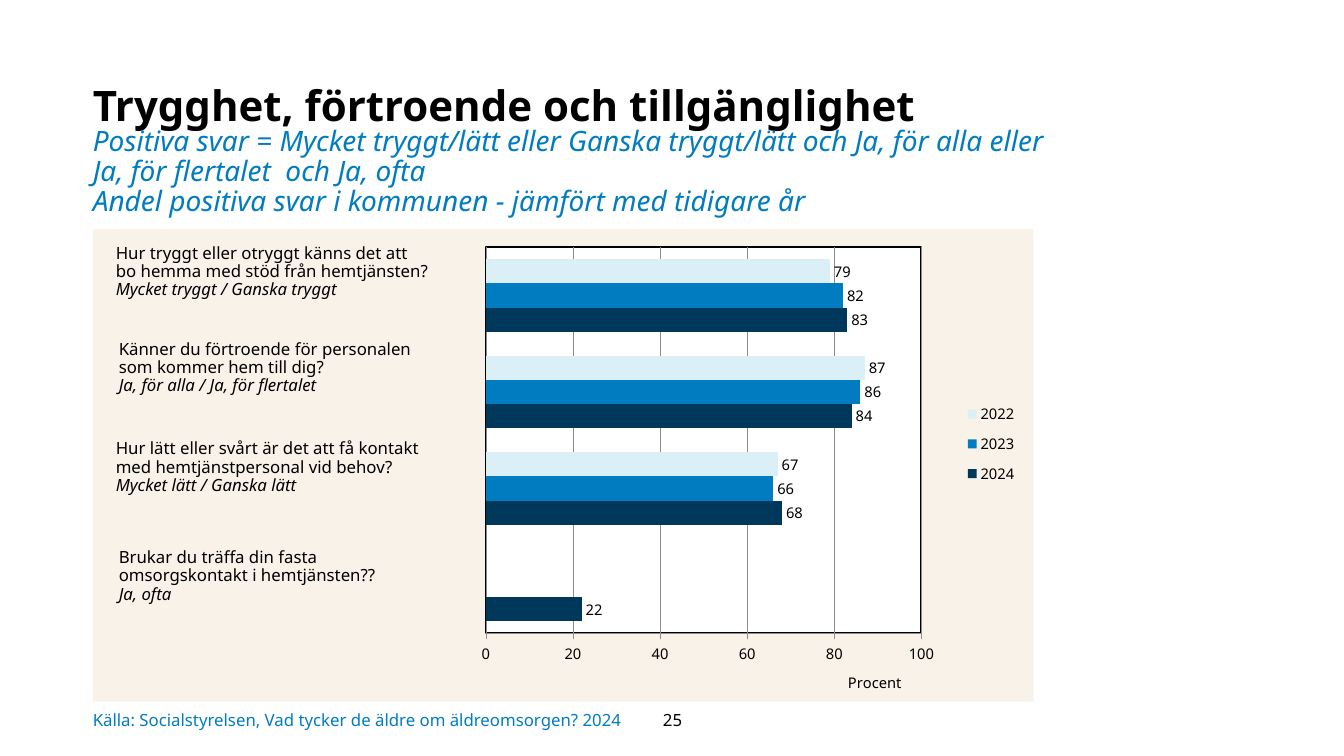
from lxml import etree
from pptx import Presentation
from pptx.chart.data import CategoryChartData
from pptx.dml.color import RGBColor
from pptx.enum.chart import XL_CHART_TYPE, XL_LABEL_POSITION, XL_LEGEND_POSITION, XL_TICK_MARK
from pptx.enum.text import MSO_ANCHOR, MSO_AUTO_SIZE, PP_ALIGN
from pptx.oxml import parse_xml
from pptx.oxml.ns import nsdecls, qn
from pptx.util import Inches, Pt

BAR = XL_CHART_TYPE.BAR_CLUSTERED
OUTSIDE_END = XL_LABEL_POSITION.OUTSIDE_END
LEGEND_RIGHT = XL_LEGEND_POSITION.RIGHT
TICK_OUT = XL_TICK_MARK.OUTSIDE
TOP, MIDDLE = MSO_ANCHOR.TOP, MSO_ANCHOR.MIDDLE
LEFT, CENTER = PP_ALIGN.LEFT, PP_ALIGN.CENTER

# Content
TITLE = "Trygghet, förtroende och tillgänglighet"
SUBTITLE = [
    "Positiva svar = Mycket tryggt/lätt eller Ganska tryggt/lätt och Ja, för alla eller "
    "Ja, för flertalet  och Ja, ofta",
    "Andel positiva svar i kommunen - jämfört med tidigare år",
]
QUESTIONS = [  # left, top, width, question lines, positive answers
    (1.05, 2.38, 3.48, ["Hur tryggt eller otryggt känns det att",
                        "bo hemma med stöd från hemtjänsten?"], "Mycket tryggt / Ganska tryggt"),
    (1.08, 3.33, 3.26, ["Känner du förtroende för personalen",
                        "som kommer hem till dig?"], "Ja, för alla / Ja, för flertalet"),
    (1.05, 4.32, 3.23, ["Hur lätt eller svårt är det att få kontakt",
                        "med hemtjänstpersonal vid behov?"], "Mycket lätt / Ganska lätt"),
    (1.08, 5.40, 3.26, ["Brukar du träffa din fasta omsorgskontakt i hemtjänsten??"],
     "Ja, ofta"),
]
CATEGORIES = ["1", "2", "3", "4"]
SERIES = [  # year, values from the bottom question up, colour
    ("2024", (22, 68, 84, 83), "00385C"),
    ("2023", (None, 66, 86, 82), "017CC1"),
    ("2022", (None, 67, 87, 79), "DBF0F6"),
]
AXIS_TITLE = "Procent"
SOURCE = "Källa: Socialstyrelsen, Vad tycker de äldre om äldreomsorgen? 2024"
PAGE = "25"

THEME = {
    "font": "Noto Sans", "text": "000000", "accent": "017CC1",
    "panel": "F8F2E8", "plot": "FFFFFF", "grid": "8C8C8C",
    "title": 30, "subtitle": 20, "body": 12, "chart": 10.5,
}


def style(font, size, color=THEME["text"], bold=False, italic=False):
    font.name = THEME["font"]
    font.size = Pt(size)
    font.bold = bold
    font.italic = italic
    font.color.rgb = RGBColor.from_string(color)


def place(s, left, top, width, height):
    s.left, s.top, s.width, s.height = map(Inches, (left, top, width, height))


def write(s, lines, spacing=0.9, anchor=TOP, align=LEFT, insets=(0.1, 0.05, 0.1, 0.05)):
    """Fill a shape with one paragraph; each line is (text, style arguments)."""
    tf = s.text_frame
    tf.word_wrap = True
    tf.auto_size = MSO_AUTO_SIZE.NONE
    tf.vertical_anchor = anchor
    tf.margin_left, tf.margin_top, tf.margin_right, tf.margin_bottom = map(Inches, insets)
    p = tf.paragraphs[0]
    p.alignment = align
    p.line_spacing = spacing
    p.space_before = Pt(0)
    for i, (text, look) in enumerate(lines):
        if i:
            p.add_line_break()
        r = p.add_run()
        r.text = text
        style(r.font, **look)
    return p


def set_layout(parent, index, x, y, w=None, h=None, inner=False):
    """Give a chart part a fixed place, in fractions of the chart."""
    for old in parent.findall(qn("c:layout")):
        parent.remove(old)
    layout = etree.Element(qn("c:layout"))
    manual = etree.SubElement(layout, qn("c:manualLayout"))
    fields = [("layoutTarget", "inner" if inner else None), ("xMode", "edge"),
              ("yMode", "edge"), ("x", x), ("y", y), ("w", w), ("h", h)]
    for tag, value in fields:
        if value is not None:
            etree.SubElement(manual, qn("c:" + tag)).set("val", str(value))
    parent.insert(index, layout)


def area_format(fill, line=None):
    stroke = f'<a:solidFill><a:srgbClr val="{line}"/></a:solidFill>' if line else "<a:noFill/>"
    return parse_xml(
        f'<c:spPr {nsdecls("c", "a")}><a:solidFill><a:srgbClr val="{fill}"/></a:solidFill>'
        f'<a:ln w="{Pt(1.5)}">{stroke}</a:ln></c:spPr>')


def add_bar_chart(slide):
    data = CategoryChartData()
    data.categories = CATEGORIES
    for year, values, _ in SERIES:
        data.add_series(year, values)
    box = map(Inches, (0.92, 2.27, 9.33, 4.69))
    chart = slide.shapes.add_chart(BAR, *box, data).chart
    chart.has_title = False
    style(chart.font, THEME["chart"])

    # Bars and value labels
    plot = chart.plots[0]
    plot.gap_width = 100
    plot.overlap = 0
    plot.vary_by_categories = False
    for series, (_, _, color) in zip(plot.series, SERIES):
        series.format.fill.solid()
        series.format.fill.fore_color.rgb = RGBColor.from_string(color)
        labels = series.data_labels
        labels.show_value = True
        labels.position = OUTSIDE_END
        style(labels.font, THEME["chart"])

    # Axes
    chart.category_axis.visible = False
    axis = chart.value_axis
    axis.minimum_scale, axis.maximum_scale, axis.major_unit = 0, 100, 20
    axis.major_tick_mark = TICK_OUT
    axis.has_major_gridlines = True
    style(axis.tick_labels.font, THEME["chart"])
    for line in (axis.format.line, axis.major_gridlines.format.line):
        line.color.rgb = RGBColor.from_string(THEME["grid"])
        line.width = Pt(0.5)
    r = axis.axis_title.text_frame.paragraphs[0].add_run()
    r.text = AXIS_TITLE
    style(r.font, THEME["chart"])

    # Legend
    chart.has_legend = True
    legend = chart.legend
    legend.position = LEGEND_RIGHT
    legend.include_in_layout = False
    style(legend.font, THEME["chart"])

    # Backgrounds and fixed places
    root = chart.element
    plot_area = root.find(".//" + qn("c:plotArea"))
    plot_area.append(area_format(THEME["plot"], THEME["text"]))
    root.find(qn("c:chart")).addnext(area_format(THEME["panel"]))
    set_layout(plot_area, 0, 0.418, 0.039, 0.463, 0.817, inner=True)
    set_layout(plot_area.find(".//" + qn("c:title")), 1, 0.80, 0.93)
    set_layout(root.find(".//" + qn("c:legend")), 1, 0.92, 0.35, 0.07, 0.21)


def main():
    prs = Presentation()
    prs.slide_width, prs.slide_height = Inches(13.33), Inches(7.5)
    slide = prs.slides.add_slide(prs.slide_layouts[1])

    # Title and subtitle
    title, subtitle = slide.shapes.title, slide.placeholders[1]
    place(title, 0.92, 0.74, 9.98, 0.56)
    write(title, [(TITLE, dict(size=THEME["title"], bold=True))],
          spacing=1.1, insets=(0, 0, 0.1, 0.05))
    place(subtitle, 0.92, 1.26, 9.68, 1.04)
    look = dict(size=THEME["subtitle"], color=THEME["accent"], italic=True)
    p = write(subtitle, [(line, look) for line in SUBTITLE], insets=(0, 0, 0, 0))
    p.space_after = Pt(8)
    pPr = p._p.get_or_add_pPr()
    pPr.set("marL", "0")
    pPr.set("indent", "0")
    etree.SubElement(pPr, qn("a:buNone"))

    add_bar_chart(slide)

    # Questions beside the bars
    body = dict(size=THEME["body"])
    for left, top, width, question, answers in QUESTIONS:
        s = slide.shapes.add_textbox(*map(Inches, (left, top, width, 0.71)))
        write(s, [(line, body) for line in question] + [(answers, dict(body, italic=True))])

    # Source and page number
    s = slide.shapes.add_textbox(*map(Inches, (0.92, 6.96, 5.91, 0.39)))
    write(s, [(SOURCE, dict(body, color=THEME["accent"]))], anchor=MIDDLE, insets=(0, 0, 0, 0))
    s = slide.shapes.add_textbox(*map(Inches, (6.16, 6.95, 1.02, 0.4)))
    write(s, [(PAGE, body)], anchor=MIDDLE, align=CENTER)

    prs.save("out.pptx")


if __name__ == "__main__":
    main()
